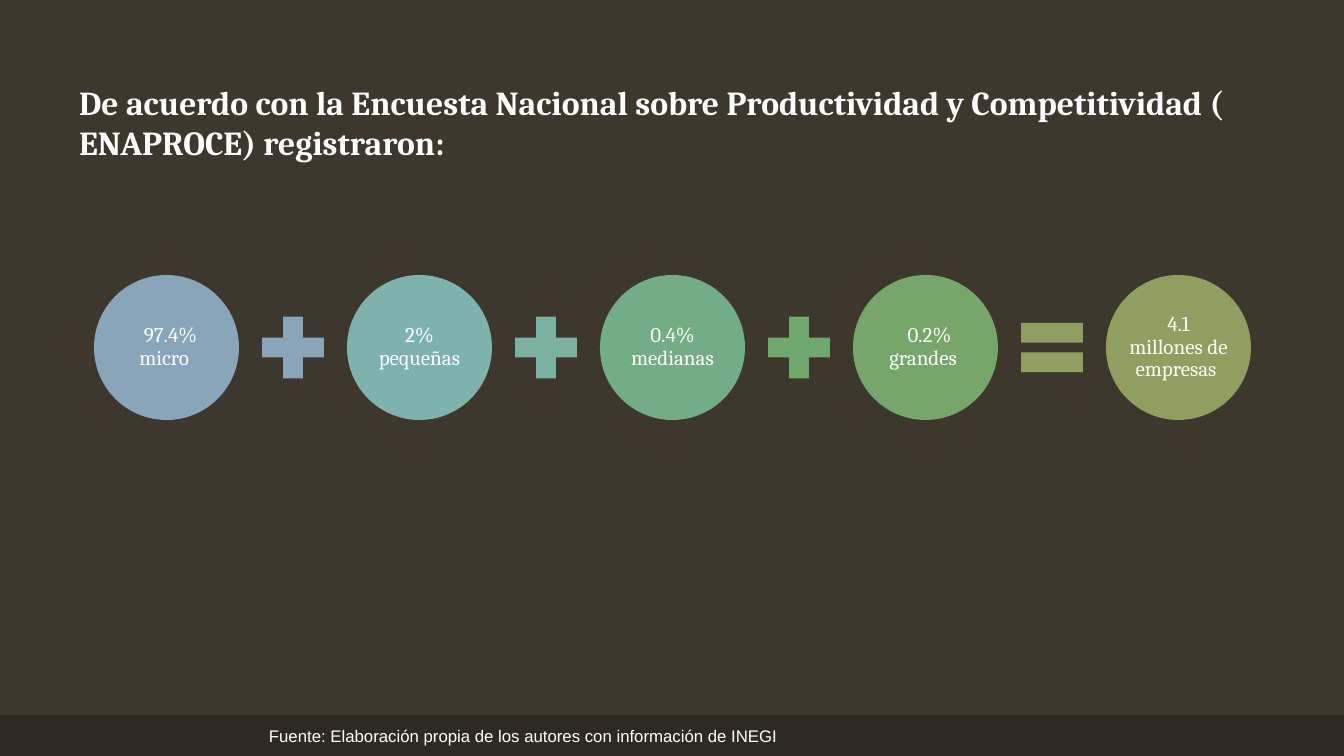
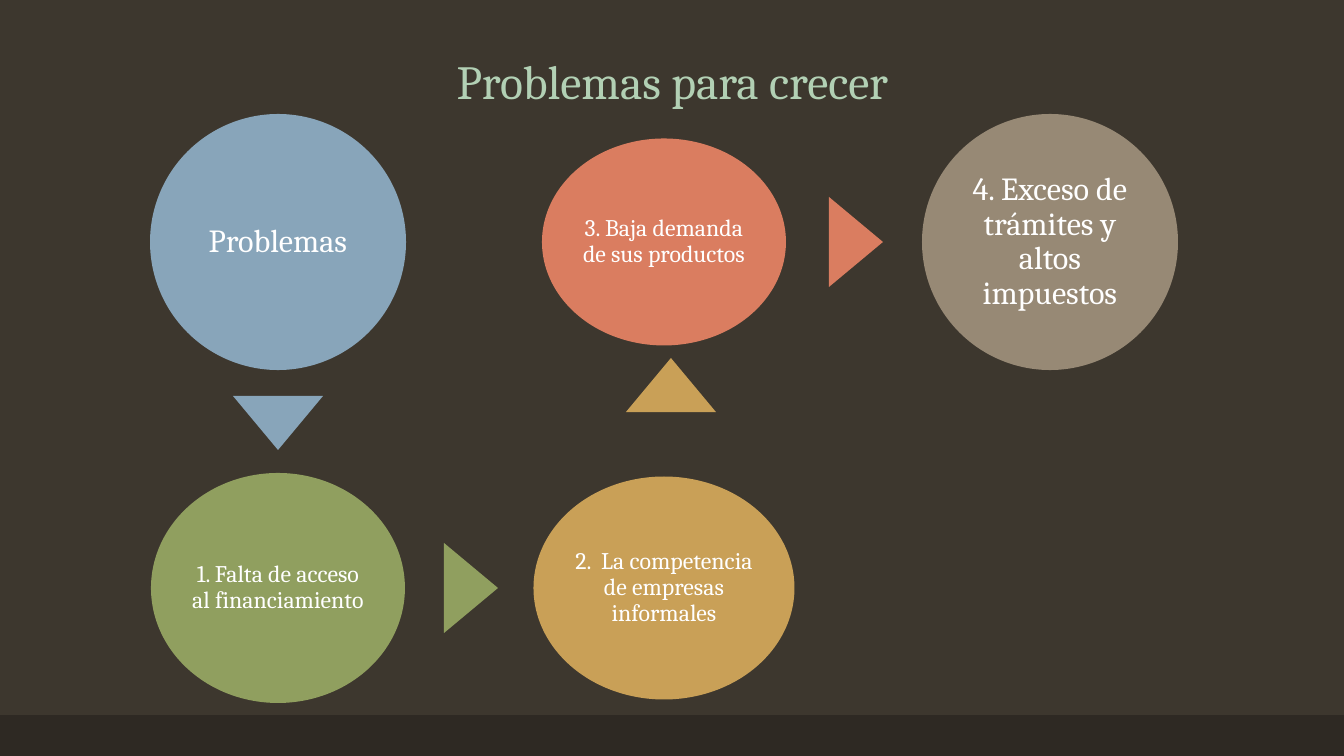
import pptx
import pptx.util
import pptx.dml.color
import pptx.enum.shapes
import pptx.enum.text

RGB = pptx.dml.color.RGBColor
KIND = pptx.enum.shapes.MSO_SHAPE
ALIGN = pptx.enum.text.PP_ALIGN
ANCHOR = pptx.enum.text.MSO_ANCHOR
FIT = pptx.enum.text.MSO_AUTO_SIZE

# Page in px, and the one scale to EMU
WIDE, HIGH = 1344, 756
SCALE = 12192000 / WIDE

# Colours
GROUND = RGB(0x3D, 0x37, 0x2E)
BAND = RGB(0x2E, 0x29, 0x23)
WHITE = RGB(0xFF, 0xFF, 0xFF)
MINT = RGB(0xB2, 0xD0, 0xB4)
BLUE = RGB(0x88, 0xA5, 0xBA)
TEAL = RGB(0x7E, 0xB3, 0xAD)
AQUA = RGB(0x7A, 0xB1, 0xA0)
JADE = RGB(0x73, 0xAD, 0x86)
GREEN = RGB(0x6F, 0xA8, 0x6C)
LEAF = RGB(0x76, 0xA6, 0x69)
OLIVE = RGB(0x90, 0x9F, 0x5F)
GOLD = RGB(0xC9, 0xA0, 0x57)
CORAL = RGB(0xDA, 0x7D, 0x60)
TAUPE = RGB(0x97, 0x89, 0x75)

# Text formats: frame, paragraph, font
SERIF = {"name": "Cambria", "color": WHITE}
LABEL = {
    "frame": {"vertical_anchor": ANCHOR.MIDDLE, "margin_left": 2, "margin_right": 2,
              "margin_top": 2, "margin_bottom": 2},
    "para": {"alignment": ALIGN.CENTER, "line_spacing": 0.9},
    "font": SERIF,
}
TITLE = {
    "frame": {"vertical_anchor": ANCHOR.BOTTOM},
    "para": {"alignment": ALIGN.CENTER, "line_spacing": 0.9},
    "font": {**SERIF, "size": 34, "color": MINT},
}
LEAD = {
    "frame": {"vertical_anchor": ANCHOR.TOP},
    "para": {"alignment": ALIGN.JUSTIFY},
    "font": {**SERIF, "size": 24, "bold": True},
}
SOURCE = {"frame": {}, "para": {}, "font": {"name": "Arial", "size": 12, "color": WHITE}}


def px(num):
    return pptx.util.Emu(round(num * SCALE))


def write(shape, text, style, size=None, indent=0):
    """Fill a shape with one formatted paragraph."""
    frame = shape.text_frame
    frame.word_wrap = True
    frame.auto_size = FIT.NONE
    for key, val in style["frame"].items():
        setattr(frame, key, px(val) if key.startswith("margin") else val)
    para = frame.paragraphs[0]
    para.text = text
    for key, val in style["para"].items():
        setattr(para, key, val)
    if indent:
        para._p.get_or_add_pPr().set("indent", str(px(indent)))
    font = para.runs[0].font
    for key, val in style["font"].items():
        if key == "color":
            font.color.rgb = val
        elif key == "size":
            font.size = pptx.util.Pt(val)
        else:
            setattr(font, key, val)
    if size:
        font.size = pptx.util.Pt(size)


def draw(slide, kind, box, fill, turn=0):
    """Add a flat preset shape."""
    shape = slide.shapes.add_shape(kind, *map(px, box))
    shape.shadow.inherit = False
    shape.fill.solid()
    shape.fill.fore_color.rgb = fill
    shape.line.fill.background()
    shape.rotation = turn
    return shape


def around(mid_x, mid_y, wide, high):
    """Box of a given size about a centre."""
    return mid_x - wide / 2, mid_y - high / 2, wide, high


def head(slide, box, text, style):
    title = slide.shapes.title
    for key, val in zip(("left", "top", "width", "height"), box):
        setattr(title, key, px(val))
    write(title, text, style)


def base(deck, slide):
    """Shared ground and foot band, kept on the master."""
    master = deck.slide_master
    master.background.fill.solid()
    master.background.fill.fore_color.rgb = GROUND
    band = draw(slide, KIND.RECTANGLE, (0, 715, WIDE, HIGH - 715), BAND)
    master.shapes.element.insert(2, band.element)


def chain(slide, box):
    """Row of equal circles with signs in the gaps."""
    left, top, wide, high = box
    parts = [
        ("97.4% micro ", BLUE, 8, KIND.MATH_PLUS, BLUE),
        ("2% pequeñas", TEAL, 0, KIND.MATH_PLUS, AQUA),
        ("0.4% medianas", JADE, 0, KIND.MATH_PLUS, GREEN),
        ("0.2% grandes ", LEAF, 8, KIND.MATH_EQUAL, OLIVE),
        ("4.1 millones de empresas ", OLIVE, 0, None, None),
    ]
    step = (wide - high) / (len(parts) - 1)
    sign = 84
    for num, (text, fill, indent, kind, tint) in enumerate(parts):
        x = left + num * step
        disc = draw(slide, KIND.OVAL, (x, top, high, high), fill)
        write(disc, text, LABEL, 15, indent)
        if kind:
            mid = x + (high + step) / 2
            draw(slide, kind, around(mid, top + high / 2, sign, sign), tint)


def flow(slide, box):
    """Ovals on a grid of three columns and two rows, joined by triangles."""
    left, top, wide, high = box
    cols = [left + wide * num / 2 for num in range(3)]
    rows = [top, top + high]
    ovals = [
        (0, 0, 256, 256, BLUE, 23, "Problemas"),
        (0, 1, 254, 230, OLIVE, 17, "1. Falta de acceso al financiamiento"),
        (1, 1, 261, 223, GOLD, 17, "2.  La competencia de empresas informales"),
        (1, 0, 244, 207, CORAL, 17, "3. Baja demanda de sus productos"),
        (2, 0, 256, 256, TAUPE, 23, "4. Exceso de trámites y altos impuestos"),
    ]
    for col, row, w, h, fill, size, text in ovals:
        oval = draw(slide, KIND.OVAL, around(cols[col], rows[row], w, h), fill)
        write(oval, text, LABEL, size)
    # Triangle centres, from the box corner
    for x, y, turn, fill in [(0, 181, 180, BLUE), (193, high, 90, OLIVE),
                             (393, 143, 0, GOLD), (578, 0, 90, CORAL)]:
        draw(slide, KIND.ISOSCELES_TRIANGLE, around(left + x, top + y, 90, 54), fill, turn)


def survey(slide):
    head(slide, (69, 77, 1174, 92),
         "De acuerdo con la Encuesta Nacional sobre Productividad y "
         "Competitividad (\tENAPROCE) registraron: ", LEAD)
    chain(slide, (94, 275, 1157, 145))
    note = slide.shapes.add_textbox(*map(px, (259, 721, 690, 30)))
    write(note, "Fuente: Elaboración propia de los autores con información de INEGI", SOURCE)


def issues(slide):
    head(slide, (93, 40, 1159, 75), "Problemas para crecer", TITLE)
    flow(slide, (278, 242, 772, 346))


def main():
    deck = pptx.Presentation()
    deck.slide_width, deck.slide_height = px(WIDE), px(HIGH)
    plain = deck.slide_layouts.get_by_name("Title Only")
    first, second = (deck.slides.add_slide(plain) for _ in range(2))
    base(deck, first)
    survey(first)
    issues(second)
    deck.save("out.pptx")


if __name__ == "__main__":
    main()
